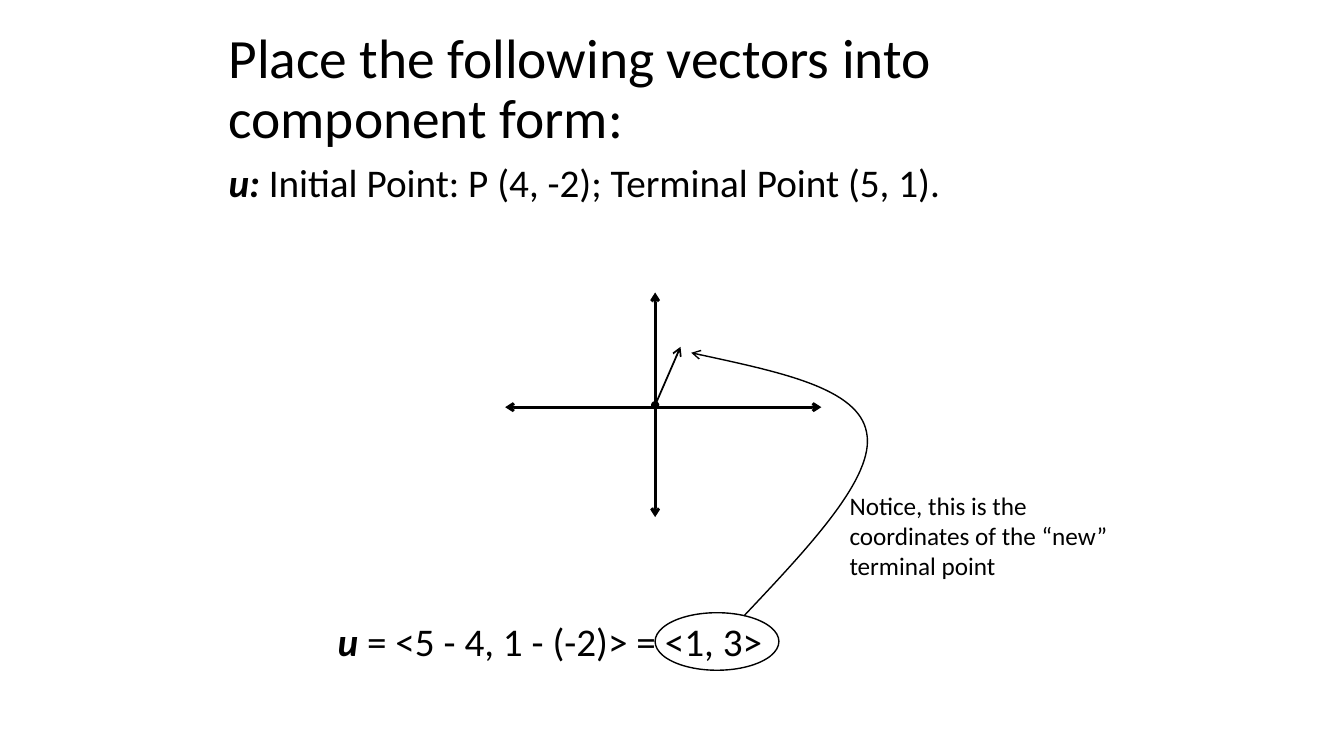
from lxml import etree
from pptx import Presentation
from pptx.dml.color import RGBColor
from pptx.enum.shapes import MSO_CONNECTOR, MSO_SHAPE
from pptx.enum.text import MSO_ANCHOR, MSO_AUTO_SIZE
from pptx.oxml.ns import qn
from pptx.util import Cm, Pt

STRAIGHT = MSO_CONNECTOR.STRAIGHT
ELLIPSE = MSO_SHAPE.OVAL
TOP, MIDDLE = MSO_ANCHOR.TOP, MSO_ANCHOR.MIDDLE
FIT_SHAPE, FIXED_SIZE = MSO_AUTO_SIZE.SHAPE_TO_FIT_TEXT, MSO_AUTO_SIZE.NONE

FONT = "Calibri"
BLACK = "000000"
ORIGIN_X, AXIS_Y = 16.51, 10.26


def color(hex_string):
    return RGBColor.from_string(hex_string)


def add_text(slide, box, text, size, lead="", anchor=TOP, wrap=True,
             grow=False, line_spacing=None):
    """Add a text box; lead is a bold italic opening before the text."""
    shape = slide.shapes.add_textbox(*map(Cm, box))
    frame = shape.text_frame
    frame.word_wrap = wrap
    frame.auto_size = FIT_SHAPE if grow else FIXED_SIZE
    frame.vertical_anchor = anchor
    paragraph = frame.paragraphs[0]
    paragraph.line_spacing = line_spacing
    for content, emphasis in ((lead, True), (text, False)):
        if content:
            run = paragraph.add_run()
            run.text = content
            run.font.name = FONT
            run.font.size = Pt(size)
            run.font.bold = run.font.italic = emphasis
            run.font.color.rgb = color(BLACK)


def style_line(shape, width, head=None, tail=None):
    """Set a black outline; head and tail name the marks at start and end."""
    shape.line.color.rgb = color(BLACK)
    shape.line.width = Pt(width)
    outline = shape.line._get_or_add_ln()
    for tag, mark in (("a:headEnd", head), ("a:tailEnd", tail)):
        if mark:
            etree.SubElement(outline, qn(tag)).set("type", mark)


def add_arrow(slide, start, end, width, head):
    connector = slide.shapes.add_connector(STRAIGHT, *map(Cm, start + end))
    style_line(connector, width, head, "arrow")
    etree.SubElement(connector._element.spPr, qn("a:effectLst"))


def add_ellipse(slide, box):
    shape = slide.shapes.add_shape(ELLIPSE, *map(Cm, box))
    shape.shadow.inherit = False
    shape.fill.background()
    style_line(shape, 1)


def add_curved_arrow(slide, start, points):
    """Draw cubic curves: each three points are two controls and an end."""
    builder = slide.shapes.build_freeform(*map(Cm, start))
    builder.add_line_segments([tuple(map(Cm, point)) for point in points], close=False)
    shape = builder.convert_to_shape()
    shape.shadow.inherit = False
    shape.fill.background()
    style_line(shape, 1, tail="arrow")
    segments = list(shape._element.iter(qn("a:lnTo")))
    outline = segments[0].getparent()
    for first in range(0, len(segments), 3):
        curve = etree.SubElement(outline, qn("a:cubicBezTo"))
        for segment in segments[first:first + 3]:
            curve.append(segment[0])
            outline.remove(segment)


def main():
    presentation = Presentation()
    presentation.slide_width, presentation.slide_height = Cm(33.87), Cm(19.05)
    slide = presentation.slides.add_slide(presentation.slide_layouts[6])

    add_text(slide, (5.51, 0.76, 22.86, 3.05),
             "Place the following vectors into component form:", 39.6,
             anchor=MIDDLE, line_spacing=0.9)
    add_text(slide, (5.51, 4.01, 22.86, 1.9),
             "Initial Point: P (4, -2); Terminal Point (5, 1).", 28,
             lead="u: ", line_spacing=0.9)

    add_arrow(slide, (ORIGIN_X, 7.37), (ORIGIN_X, 13.03), 2, "arrow")
    add_arrow(slide, (12.73, AXIS_Y), (20.7, AXIS_Y), 2, "arrow")
    add_arrow(slide, (ORIGIN_X, 10.21), (17.15, 8.74), 1.25, "oval")

    add_text(slide, (8.26, 15.44, 11.38, 1.45), "= <5 - 4, 1 - (-2)> = <1, 3>",
             28, lead="u ", wrap=False, grow=True)
    add_ellipse(slide, (ORIGIN_X, 15.44, 3.12, 1.45))
    add_curved_arrow(slide, (18.75, 15.52), [
        (20.4, 13.77), (22.07, 12.01), (21.84, 10.9),
        (21.64, 9.78), (19.53, 9.35), (17.42, 8.89),
    ])
    add_text(slide, (21.16, 12.22, 7.04, 2.54),
             "Notice, this is the coordinates of the “new” terminal point",
             18, grow=True)

    presentation.save("out.pptx")


if __name__ == "__main__":
    main()
